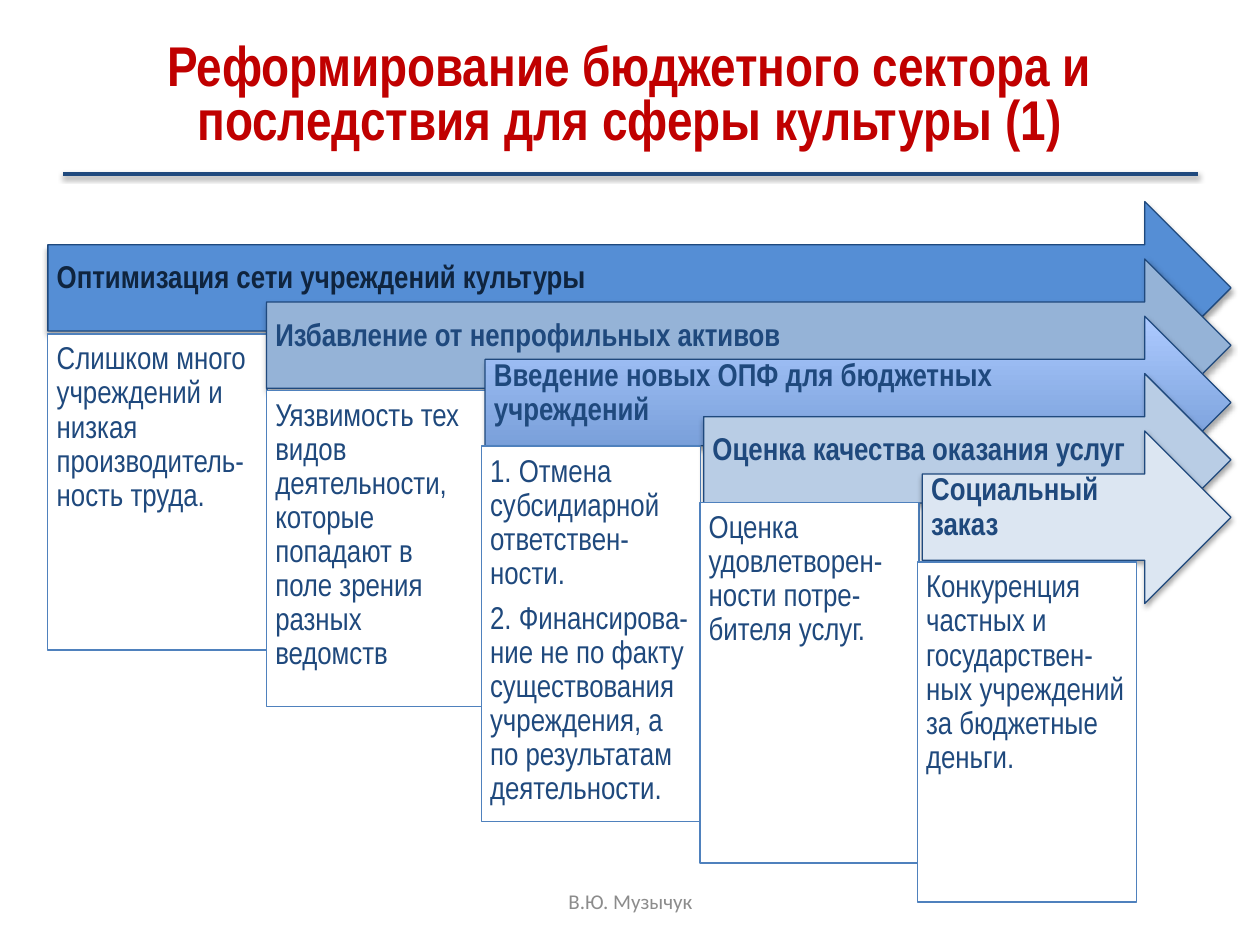
from typing import NamedTuple

from lxml import etree
from pptx import Presentation
from pptx.dml.color import RGBColor
from pptx.enum.shapes import MSO_CONNECTOR, MSO_SHAPE
from pptx.enum.text import MSO_ANCHOR, PP_ALIGN
from pptx.oxml.ns import qn
from pptx.util import Inches, Pt

ARROW = MSO_SHAPE.RIGHT_ARROW
RECT = MSO_SHAPE.RECTANGLE
STRAIGHT = MSO_CONNECTOR.STRAIGHT
TOP, MIDDLE = MSO_ANCHOR.TOP, MSO_ANCHOR.MIDDLE
LEFT, CENTER = PP_ALIGN.LEFT, PP_ALIGN.CENTER

RED = RGBColor(0xC0, 0x00, 0x00)
NAVY = RGBColor(0x1F, 0x49, 0x7D)
DARK = RGBColor(0x0F, 0x24, 0x3E)
BLUE = RGBColor(0x4F, 0x81, 0xBD)
GRAY = RGBColor(0x8C, 0x8C, 0x8C)
WHITE = RGBColor(0xFF, 0xFF, 0xFF)
BRIGHT = RGBColor(0x55, 0x8E, 0xD5)
STEEL = RGBColor(0x95, 0xB3, 0xD7)
DEEP = RGBColor(0x67, 0x91, 0xCD)
LIGHT = RGBColor(0xAD, 0xCA, 0xFF)
PALE = RGBColor(0xB9, 0xCD, 0xE5)
MIST = RGBColor(0xDC, 0xE6, 0xF2)

FONT = "Arial Narrow"
START_X, START_Y = 0.38, 1.6
STEP_X, STEP_Y = 1.735, 0.455
END_X, ARROW_H = 9.77, 1.37
BOX_W = 1.74


class Stage(NamedTuple):
    head: str
    body: list[str]
    fill: list[RGBColor]
    ink: RGBColor
    shift: float
    top: float
    height: float


STAGES = [
    Stage("Оптимизация сети учреждений культуры",
          ["Слишком много учреждений и низкая производитель-ность труда."],
          [BRIGHT], DARK, 0, 2.65, 2.51),
    Stage("Избавление от непрофильных активов",
          ["Уязвимость тех видов деятельности, которые попадают в поле "
           "зрения разных ведомств"],
          [STEEL], NAVY, 0, 3.1, 2.51),
    Stage("Введение новых ОПФ для бюджетных учреждений",
          ["1. Отмена субсидиарной ответствен-ности.",
           "2. Финансирова-ние не по факту существования учреждения, а по "
           "результатам деятельности."],
          [DEEP, LIGHT], NAVY, -0.03, 3.54, 2.98),
    Stage("Оценка качества оказания услуг",
          ["Оценка удовлетворен-ности потре-бителя услуг."],
          [PALE], NAVY, -0.03, 3.99, 2.86),
    Stage("Социальный заказ",
          ["Конкуренция частных и государствен-ных учреждений за бюджетные "
           "деньги."],
          [MIST], NAVY, -0.04, 4.46, 2.7),
]


def write(shape, lines: list[str], *, size: float = 18, color=NAVY,
          font: str = FONT, bold: bool = False, align=LEFT, anchor=TOP,
          pitch: float = 0.9, after: float = 6.3,
          pad: tuple = (0.07, 0.07, 0.07, 0.07)) -> None:
    frame = shape.text_frame
    frame.word_wrap = True
    frame.vertical_anchor = anchor
    frame.margin_left, frame.margin_top, frame.margin_right, \
        frame.margin_bottom = (Inches(p) for p in pad)
    for i, line in enumerate(lines):
        para = frame.add_paragraph() if i else frame.paragraphs[0]
        para.alignment = align
        para.line_spacing = pitch
        para.space_after = Pt(after)
        run = para.add_run()
        run.text = line
        run.font.name = font
        run.font.size = Pt(size)
        run.font.bold = bold
        run.font.color.rgb = color


def shade(shape, alpha: int, dist: float) -> None:
    props = shape._element.spPr
    effects = props.find(qn("a:effectLst"))
    if effects is None:
        effects = etree.SubElement(props, qn("a:effectLst"))
    outer = etree.SubElement(
        effects, qn("a:outerShdw"), blurRad=str(Pt(3.1)),
        dist=str(Pt(dist)), dir="5400000", rotWithShape="0")
    black = etree.SubElement(outer, qn("a:srgbClr"), val="000000")
    etree.SubElement(black, qn("a:alpha"), val=str(alpha * 1000))


def block(slide, kind, x: float, y: float, w: float, h: float,
          colors: list[RGBColor], edge: RGBColor):
    shape = slide.shapes.add_shape(
        kind, Inches(x), Inches(y), Inches(w), Inches(h))
    shape.shadow.inherit = False
    if len(colors) > 1:
        shape.fill.gradient()
        shape.fill.gradient_angle = 90
        for stop, color, pos in zip(shape.fill.gradient_stops, colors, (0, 1)):
            stop.color.rgb = color
            stop.position = pos
    else:
        shape.fill.solid()
        shape.fill.fore_color.rgb = colors[0]
    shape.line.color.rgb = edge
    shape.line.width = Pt(0.75)
    return shape


def label(slide, x: float, y: float, w: float, h: float, text: str,
          **style) -> None:
    box = slide.shapes.add_textbox(Inches(x), Inches(y), Inches(w), Inches(h))
    write(box, [text], align=CENTER, anchor=MIDDLE, after=0,
          pad=(0.1, 0.05, 0.1, 0.05), **style)


def draw(slide, index: int, stage: Stage) -> None:
    x = START_X + index * STEP_X
    y = START_Y + index * STEP_Y
    arrow = block(slide, ARROW, x, y, END_X - x, ARROW_H, stage.fill, NAVY)
    shade(arrow, 35, 1.8)
    write(arrow, [stage.head], color=stage.ink, bold=True, anchor=MIDDLE,
          pad=(0.07, 0.07, 0.28, 0.22))
    box = block(slide, RECT, x + stage.shift, stage.top, BOX_W, stage.height,
                [WHITE], BLUE)
    write(box, stage.body)


def main() -> None:
    deck = Presentation()
    deck.slide_width, deck.slide_height = Inches(10), Inches(7.5)
    slide = deck.slides.add_slide(deck.slide_layouts[6])
    label(slide, 0.5, 0.15, 9, 1.25,
          "Реформирование бюджетного сектора и последствия для сферы "
          "культуры (1)", size=32, color=RED, bold=True, pitch=0.8)
    for index, stage in enumerate(STAGES):
        draw(slide, index, stage)
    rule = slide.shapes.add_connector(
        STRAIGHT, Inches(0.5), Inches(1.38), Inches(9.51), Inches(1.38))
    rule.line.color.rgb = NAVY
    rule.line.width = Pt(2)
    shade(rule, 38, 1.6)
    label(slide, 3.42, 6.95, 3.17, 0.4, "В.Ю. Музычук", size=12, color=GRAY,
          font="Calibri", pitch=1.0)
    deck.save("out.pptx")


if __name__ == "__main__":
    main()
